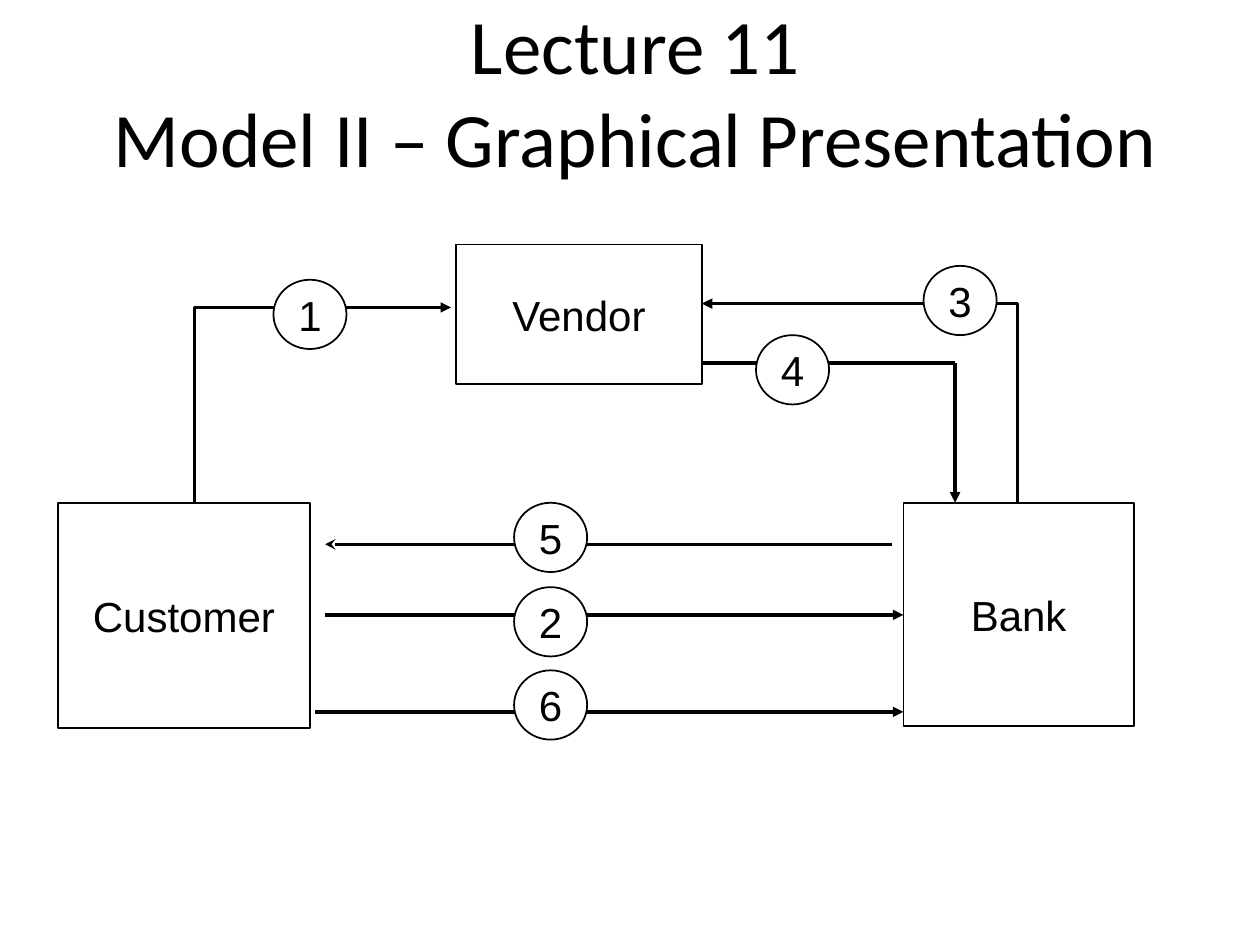
"""Build the Lecture 11 slide showing the vendor, customer and bank payment model."""
import dataclasses

import lxml.etree
import pptx
import pptx.dml.color
import pptx.enum.shapes
import pptx.enum.text
import pptx.oxml.ns
import pptx.util

Inches = pptx.util.Inches
Pt = pptx.util.Pt
qn = pptx.oxml.ns.qn
Shapes = pptx.enum.shapes.MSO_SHAPE
Links = pptx.enum.shapes.MSO_CONNECTOR


@dataclasses.dataclass(frozen=True)
class Theme:
    ink: pptx.dml.color.RGBColor = pptx.dml.color.RGBColor(0, 0, 0)
    paper: pptx.dml.color.RGBColor = pptx.dml.color.RGBColor(255, 255, 255)
    title_font: str = "Calibri"
    label_font: str = "Arial"
    title_size: int = 44
    label_size: int = 24
    outline: int = 1
    arrow: int = 2


theme = Theme()


def write_text(shape, text, *, font, size, color=theme.ink, wrap=False):
    frame = shape.text_frame
    frame.word_wrap = wrap
    frame.vertical_anchor = pptx.enum.text.MSO_ANCHOR.MIDDLE
    frame.text = text
    for paragraph in frame.paragraphs:
        paragraph.alignment = pptx.enum.text.PP_ALIGN.CENTER
        paragraph.font.name = font
        paragraph.font.size = Pt(size)
        paragraph.font.color.rgb = color


deck = pptx.Presentation()
deck.slide_width = Inches(10)
deck.slide_height = Inches(7.5)
slide = deck.slides.add_slide(deck.slide_layouts[6])

title = slide.shapes.add_textbox(Inches(0.38), Inches(0.17), Inches(9.33), Inches(1.09))
write_text(title, "Lecture 11\nModel II – Graphical Presentation",
           font=theme.title_font, size=theme.title_size, wrap=True)

flows = [
    (Links.ELBOW, (1.54, 3.99), (3.58, 2.44), "triangle"),
    (Links.STRAIGHT, (2.58, 4.88), (7.17, 4.88), "triangle"),
    (Links.ELBOW, (8.08, 3.99), (5.57, 2.41), "triangle"),
    (Links.STRAIGHT, (5.58, 2.88), (7.58, 2.88), None),
    (Links.STRAIGHT, (7.58, 2.88), (7.58, 3.99), "triangle"),
    (Links.STRAIGHT, (7.08, 4.32), (2.58, 4.32), "stealth"),
    (Links.STRAIGHT, (2.5, 5.65), (7.17, 5.65), "triangle"),
]
for route, start, end, arrowhead in flows:
    flow = slide.shapes.add_connector(route, *map(Inches, start + end))
    flow.line.color.rgb = theme.ink
    flow.line.width = Pt(theme.arrow)
    properties = flow._element.spPr
    lxml.etree.SubElement(properties, qn("a:effectLst"))
    if arrowhead:
        lxml.etree.SubElement(properties.find(qn("a:ln")), qn("a:tailEnd"), type=arrowhead)
    if route == Links.ELBOW:
        bends = properties.find(qn("a:prstGeom")).find(qn("a:avLst"))
        lxml.etree.SubElement(bends, qn("a:gd"), name="adj1", fmla="val 200")

parties = [
    ("Vendor", 3.62, 1.94, 1.95, 1.11),
    ("Customer", 0.46, 3.99, 2, 1.79),
    ("Bank", 7.17, 3.99, 1.83, 1.77),
]
step_places = {
    "1": (2.17, 2.22),
    "2": (4.08, 4.66),
    "3": (7.33, 2.11),
    "4": (6, 2.66),
    "5": (4.08, 3.99),
    "6": (4.08, 5.32),
}
nodes = [(Shapes.RECTANGLE, *party) for party in parties]
nodes += [(Shapes.OVAL, step, left, top, 0.58, 0.55)
          for step, (left, top) in step_places.items()]
for outline, label, *place in nodes:
    node = slide.shapes.add_shape(outline, *map(Inches, place))
    node.shadow.inherit = False
    node.fill.solid()
    node.fill.fore_color.rgb = theme.paper
    node.line.color.rgb = theme.ink
    node.line.width = Pt(theme.outline)
    write_text(node, label, font=theme.label_font, size=theme.label_size)

deck.save("out.pptx")
